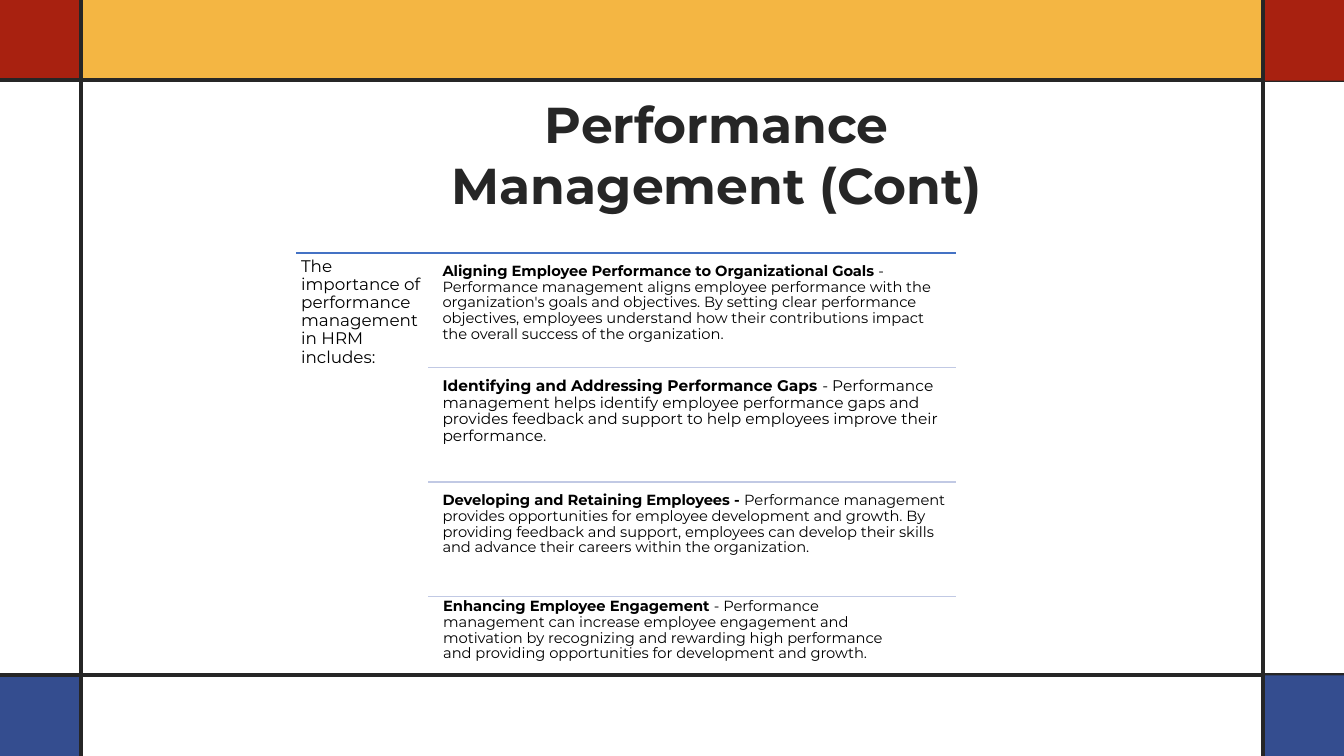
from lxml.etree import SubElement
from pptx import Presentation
from pptx.dml.color import RGBColor
from pptx.enum.shapes import MSO_CONNECTOR, MSO_SHAPE
from pptx.enum.text import MSO_ANCHOR, PP_ALIGN
from pptx.oxml.ns import qn
from pptx.util import Pt

WIDTH, HEIGHT = 960, 540
BAND = 57.6
RIGHT, BOTTOM = WIDTH - BAND, HEIGHT - BAND

YELLOW = RGBColor(0xF4, 0xB6, 0x43)
BLUE = RGBColor(0x34, 0x4D, 0x8F)
RED = RGBColor(0xA8, 0x21, 0x10)
CHARCOAL = RGBColor(0x26, 0x26, 0x26)
BLACK = RGBColor(0, 0, 0)
TOP_RULE = RGBColor(0x44, 0x72, 0xC4)
PALE_RULE = RGBColor(0xC1, 0xC9, 0xE4)

prs = Presentation()
prs.slide_width, prs.slide_height = Pt(WIDTH), Pt(HEIGHT)
slide = prs.slides.add_slide(prs.slide_layouts[6])


def add_rule(x1, y1, x2, y2, color, weight):
    rule = slide.shapes.add_connector(
        MSO_CONNECTOR.STRAIGHT, Pt(x1), Pt(y1), Pt(x2), Pt(y2))
    rule.line.color.rgb = color
    rule.line.width = Pt(weight)
    SubElement(rule._element.spPr, qn("a:effectLst"))


def add_text(box, *texts, size, color=BLACK, bold=False, spacing=0.9,
             align=PP_ALIGN.LEFT, anchor=MSO_ANCHOR.TOP, inset=3.6):
    """Place texts as runs of one paragraph; bold applies to the first."""
    frame = slide.shapes.add_textbox(*map(Pt, box)).text_frame
    frame.word_wrap = True
    frame.vertical_anchor = anchor
    frame.margin_left = frame.margin_right = Pt(inset)
    frame.margin_top = frame.margin_bottom = Pt(3.6)
    paragraph = frame.paragraphs[0]
    paragraph.alignment = align
    paragraph.line_spacing = spacing
    for index, text in enumerate(texts):
        run = paragraph.add_run()
        run.text = text
        run.font.name = "Montserrat"
        run.font.size = Pt(size)
        run.font.bold = bold and index == 0
        run.font.color.rgb = color


# Coloured frame: the right corners cover the ends of the horizontal rules
left_blocks = [(BAND, 0, RIGHT - BAND, YELLOW), (0, BOTTOM, BAND, BLUE), (0, 0, BAND, RED)]
left_rules = [(0, 57, WIDTH, 57), (0, BOTTOM, WIDTH, BOTTOM), (BAND, 0, BAND, HEIGHT)]
right_blocks = [(RIGHT, BOTTOM, BAND, BLUE), (RIGHT, 0, BAND, RED)]
right_rules = [(RIGHT, 0, RIGHT, HEIGHT)]
for blocks, rules in ((left_blocks, left_rules), (right_blocks, right_rules)):
    for left, top, width, color in blocks:
        block = slide.shapes.add_shape(
            MSO_SHAPE.RECTANGLE, Pt(left), Pt(top), Pt(width), Pt(BAND))
        block.shadow.inherit = False
        block.fill.solid()
        block.fill.fore_color.rgb = color
        block.line.fill.background()
    for ends in rules:
        add_rule(*ends, CHARCOAL, 2.75)

add_text((304, 62.6, 416, 94.4), "Performance Management (Cont)", size=36,
         color=CHARCOAL, bold=True, spacing=1, align=PP_ALIGN.CENTER,
         anchor=MSO_ANCHOR.MIDDLE, inset=7.2)

# Importance list: one rule above each benefit
LIST_LEFT, LIST_TOP, LIST_RIGHT = 211.5, 180.7, 682.7
BENEFIT_LEFT, ROW_PITCH = 306, 81.8

add_text((LIST_LEFT, LIST_TOP, 94.3, 249),
         "The importance of performance management in HRM includes:", size=12)

benefits = [
    ("Aligning Employee Performance to Organizational Goals",
     " - Performance management aligns employee performance with the organization's "
     "goals and objectives. By setting clear performance objectives, employees "
     "understand how their contributions impact the overall success of the organization.",
     10.5, (312.5, 4, 370, 77.8)),
    ("Identifying and Addressing Performance Gaps ",
     "- Performance management helps identify employee performance gaps and provides "
     "feedback and support to help employees improve their performance.",
     11, (312.5, 4, 370, 77.8)),
    ("Developing and Retaining Employees - ",
     "Performance management provides opportunities for employee development and "
     "growth. By providing feedback and support, employees can develop their skills "
     "and advance their careers within the organization.",
     10.5, (312.5, 4, 370, 77.8)),
    ("Enhancing Employee Engagement ",
     "- Performance management can increase employee engagement and motivation by "
     "recognizing and rewarding high performance and providing opportunities for "
     "development and growth.",
     10.5, (313, -2, 342.7, 69.8)),
]
for row, (benefit, explanation, size, (left, offset, width, height)) in enumerate(benefits):
    y = LIST_TOP + row * ROW_PITCH
    rule_left, rule_color = (BENEFIT_LEFT, PALE_RULE) if row else (LIST_LEFT, TOP_RULE)
    add_rule(rule_left, y, LIST_RIGHT, y, rule_color, 1)
    add_text((left, y + offset, width, height), benefit, explanation, size=size, bold=True)

prs.save("out.pptx")
